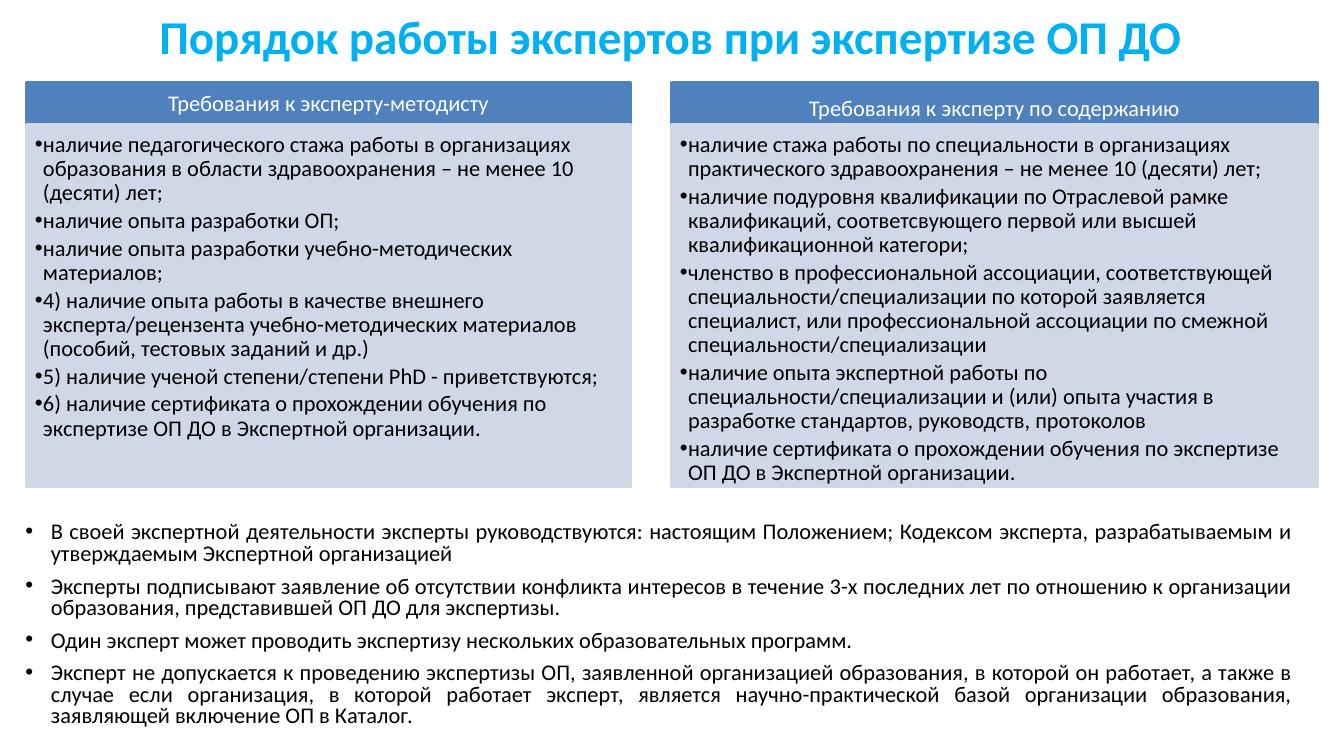
from lxml.etree import SubElement as Sub
from pptx import Presentation
from pptx.dml.color import RGBColor as RGB
from pptx.enum.shapes import MSO_SHAPE as Shape
from pptx.enum.text import MSO_ANCHOR as Anchor, PP_ALIGN as Align
from pptx.oxml.ns import qn
from pptx.util import Inches, Pt

HUES = {"title": "00B0F0", "head": "4F81BD", "body": "D0D8E8",
        "white": "FFFFFF", "black": "000000"}

deck = Presentation()
deck.slide_width = Inches(10)
deck.slide_height = deck.slide_width * 9 // 16
slide = deck.slides.add_slide(deck.slide_layouts[6])

# Places are given in a grid of 100 columns by 100 rows
COL, ROW = deck.slide_width / 100, deck.slide_height / 100


def write(shape, lines, size=12, hue="black", bold=False, align=Align.LEFT,
          anchor=Anchor.TOP, pad=(0.1, 0.05, 0.1, 0.05), gap=0, pitch=1, hang=0):
    """Fill a shape with paragraphs; hang is the bullet indent in inches."""
    frame = shape.text_frame
    frame.word_wrap = True
    frame.vertical_anchor = anchor
    (frame.margin_left, frame.margin_top,
     frame.margin_right, frame.margin_bottom) = map(Inches, pad)
    for i, line in enumerate(lines):
        para = frame.add_paragraph() if i else frame.paragraphs[0]
        para.alignment, para.line_spacing = align, pitch
        para.space_before, para.space_after = Pt(0), Pt(gap)
        run = para.add_run()
        run.text = line
        run.font.size, run.font.bold, run.font.name = Pt(size), bold, "Calibri"
        run.font.color.rgb = RGB.from_string(HUES[hue])
        if hang:
            props = para._p.get_or_add_pPr()
            props.set("marL", str(Inches(hang)))
            props.set("indent", str(-Inches(hang)))
            Sub(props, qn("a:buFont"), typeface="Arial")
            Sub(props, qn("a:buChar"), char="•")


def place(kind, x, y, wide, high, hue=None):
    """Add a rectangle, or a text box when kind is None, on the grid."""
    spot = [round(n) for n in (x * COL, y * ROW, wide * COL, high * ROW)]
    if kind is None:
        return slide.shapes.add_textbox(*spot)
    shape = slide.shapes.add_shape(kind, *spot)
    shape.shadow.inherit = False
    shape.line.width = Pt(2)
    for fill in (shape.fill, shape.line.fill):
        fill.solid()
        fill.fore_color.rgb = RGB.from_string(HUES[hue])
    return shape


write(place(None, 4.9, 0, 90, 9.42), ["Порядок работы экспертов при экспертизе ОП ДО"],
      size=25.2, hue="title", bold=True, align=Align.CENTER, anchor=Anchor.MIDDLE)

# Each panel: left column, width, header height, heading, points
panels = [
    (2, 44.9, 5.51, "Требования к эксперту-методисту", [
        "наличие педагогического стажа работы в организациях образования "
        "в области здравоохранения – не менее 10 (десяти) лет;",
        "наличие опыта разработки ОП;",
        "наличие опыта разработки учебно-методических материалов;",
        "4) наличие опыта работы в качестве внешнего эксперта/рецензента "
        "учебно-методических материалов (пособий, тестовых заданий и др.)",
        "5) наличие ученой степени/степени PhD - приветствуются;",
        "6) наличие сертификата о прохождении обучения по экспертизе ОП ДО "
        "в Экспертной организации.",
    ]),
    (50, 48, 6.76, "Требования к эксперту по содержанию", [
        "наличие стажа работы по специальности в организациях "
        "практического здравоохранения – не менее 10 (десяти) лет;",
        "наличие подуровня квалификации по Отраслевой рамке квалификаций, "
        "соответсвующего первой или высшей квалификационной категори;",
        "членство в профессиональной ассоциации, соответствующей "
        "специальности/специализации по которой заявляется специалист, или "
        "профессиональной ассоциации по смежной специальности/специализации",
        "наличие опыта экспертной работы по специальности/специализации и (или) "
        "опыта участия в разработке стандартов, руководств, протоколов",
        "наличие сертификата о прохождении обучения по экспертизе ОП ДО "
        "в Экспертной организации.",
    ]),
]
for x, wide, high, head, points in panels:
    write(place(Shape.RECTANGLE, x, 11.02, wide, high, "head"), [head],
          hue="white", align=Align.CENTER, anchor=Anchor.MIDDLE,
          pad=(0.08, 0.04, 0.08, 0.04), pitch=0.9)
    write(place(Shape.RECTANGLE, x, 16.53, wide, 47.82, "body"), points,
          pad=(0.06, 0.06, 0.08, 0.09), gap=1.9, pitch=0.9, hang=0.06)

rules = [
    "В своей экспертной деятельности эксперты руководствуются: настоящим "
    "Положением; Кодексом эксперта, разрабатываемым и утверждаемым "
    "Экспертной организацией",
    "Эксперты подписывают заявление об отсутствии конфликта интересов в течение "
    "3-х последних лет по отношению к организации образования, представившей "
    "ОП ДО для экспертизы.",
    "Один эксперт может проводить экспертизу нескольких образовательных программ.",
    "Эксперт не допускается к проведению экспертизы ОП, заявленной организацией "
    "образования, в которой он работает, а также в случае если организация, "
    "в которой работает эксперт, является научно-практической базой организации "
    "образования, заявляющей включение ОП в Каталог.",
]
write(place(None, 0.9, 68.27, 96.3, 29.33), rules,
      align=Align.JUSTIFY, gap=6, pitch=0.8, hang=0.19)

deck.save("out.pptx")
